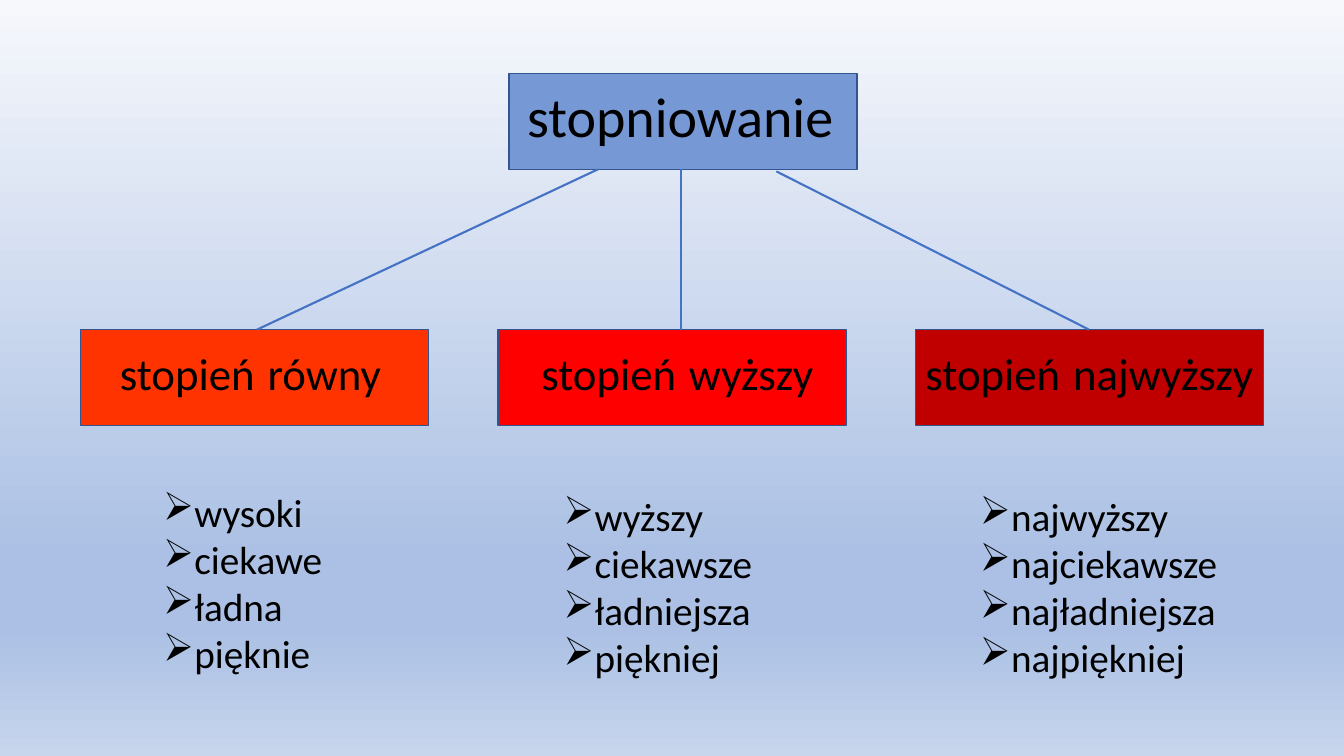
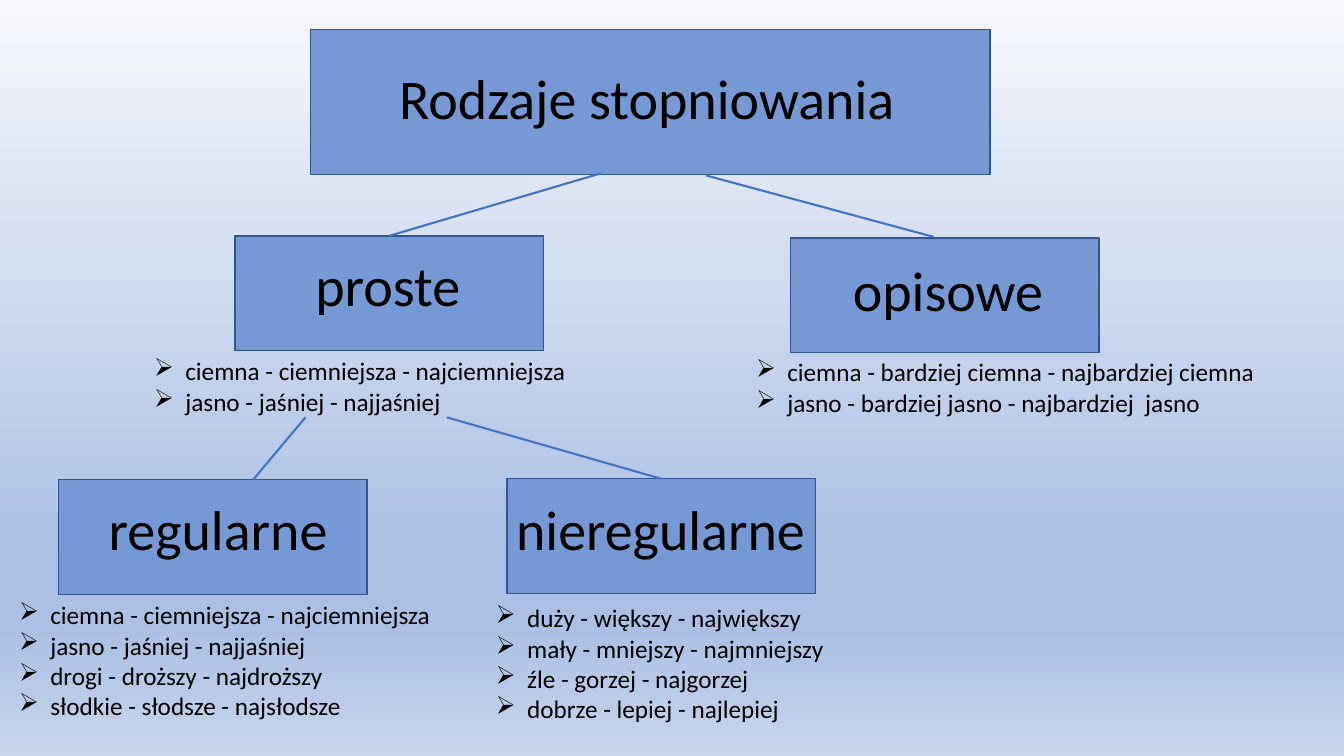
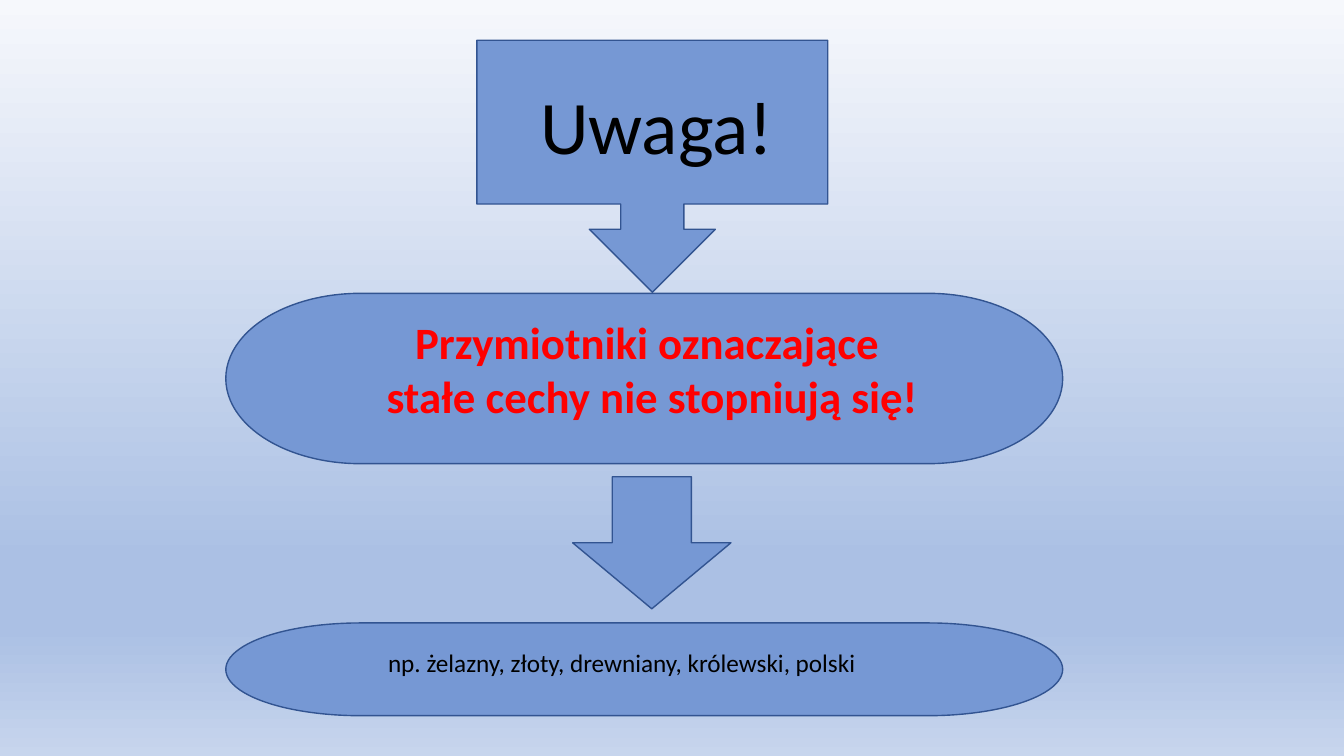
"""Build three slides on the comparison of Polish adjectives and adverbs."""
from pptx import Presentation
from pptx import util as u
from pptx.dml.color import RGBColor
from pptx.enum import shapes, text
from pptx.oxml import ns, xmlchemy

PX = 9144
FONT = "Calibri"
BULLET_INDENT = 31
COLORS = {
    "blue": "7698D4", "outline": "325491", "connector": "4472C4",
    "orange": "FF3300", "red": "FF0000", "dark red": "C00000", "black": "000000",
}
BACKGROUND_STOPS = [(0, "F6F8FC"), (74, "ABC0E4"), (83, "ABC0E4"), (100, "C7D5ED")]
PROCESS = shapes.MSO_SHAPE.FLOWCHART_PROCESS
TERMINATOR = shapes.MSO_SHAPE.FLOWCHART_TERMINATOR


def add_shape(slide, kind, box, color="blue"):
    shape = slide.shapes.add_shape(kind, *[length * PX for length in box])
    shape.shadow.inherit = False
    shape.fill.solid()
    shape.fill.fore_color.rgb = RGBColor.from_string(COLORS[color])
    shape.line.color.rgb = RGBColor.from_string(COLORS["outline"])
    shape.line.width = u.Pt(1)


def add_text(slide, box, size, lines, color="black", bold=False, centered=False, bulleted=False):
    frame = slide.shapes.add_textbox(*[length * PX for length in box]).text_frame
    frame.word_wrap = True
    frame.auto_size = text.MSO_AUTO_SIZE.SHAPE_TO_FIT_TEXT
    frame.text = "\n".join(lines)
    for paragraph in frame.paragraphs:
        if centered:
            paragraph.alignment = text.PP_ALIGN.CENTER
        if bulleted:
            properties = paragraph._p.get_or_add_pPr()
            properties.set("marL", str(BULLET_INDENT * PX))
            properties.set("indent", str(-BULLET_INDENT * PX))
            bullet = xmlchemy.OxmlElement("a:buChar")
            bullet.set("char", "➢")
            properties.append(bullet)
        for run in paragraph.runs:
            run.font.name = FONT
            run.font.size = u.Pt(size)
            run.font.bold = bold
            run.font.color.rgb = RGBColor.from_string(COLORS[color])
    return frame


presentation = Presentation()
presentation.slide_width = 1333 * PX
presentation.slide_height = 750 * PX

master = presentation.slide_master
background = master.background.fill
background.gradient()
background.gradient_angle = 270
stop_list = master._element.find(".//" + ns.qn("a:gsLst"))
for stop in list(stop_list):
    stop_list.remove(stop)
for percent, color in BACKGROUND_STOPS:
    stop = xmlchemy.OxmlElement("a:gs")
    stop.set("pos", str(percent * 1000))
    stop_color = xmlchemy.OxmlElement("a:srgbClr")
    stop_color.set("val", color)
    stop.append(stop_color)
    stop_list.append(stop)

blank = presentation.slide_layouts[6]
degrees_slide, kinds_slide, warning_slide = [presentation.slides.add_slide(blank) for _ in range(3)]

add_shape(degrees_slide, PROCESS, (505, 73, 345, 95))
add_text(degrees_slide, (513, 76, 338, 77), 40, ["stopniowanie"])
degrees = [
    ("równy", "orange", (109, 327, 338, 77), (152, 479, 236, 199),
     ["wysoki", "ciekawe", "ładna", "pięknie"]),
    ("wyższy", "red", (527, 327, 338, 77), (549, 483, 236, 199),
     ["wyższy", "ciekawsze", "ładniejsza", "piękniej"]),
    ("najwyższy", "dark red", (908, 327, 345, 77), (962, 483, 276, 199),
     ["najwyższy", "najciekawsze", "najładniejsza", "najpiękniej"]),
]
for column, (degree, color, label_box, list_box, examples) in enumerate(degrees):
    add_shape(degrees_slide, PROCESS, (80 + 414 * column, 327, 345, 95), color)
    label = add_text(degrees_slide, label_box, 32, ["stopień"]).paragraphs[0]
    for word, size in [(" ", 40), (degree, 32)]:
        run = label.add_run()
        run.text = word
        run.font.name = FONT
        run.font.size = u.Pt(size)
        run.font.color.rgb = RGBColor.from_string(COLORS["black"])
    add_text(degrees_slide, list_box, 28, examples, bulleted=True)

kinds = [
    ("Rodzaje stopniowania", (308, 29, 674, 144), (386, 58, 561, 77)),
    ("proste", (233, 234, 306, 114), (303, 244, 234, 77)),
    ("opisowe", (784, 236, 306, 114), (836, 249, 222, 77)),
    ("regularne", (58, 476, 306, 114), (98, 486, 259, 77)),
    ("nieregularne", (503, 475, 306, 114), (502, 486, 311, 77)),
]
for kind, box, label_box in kinds:
    add_shape(kinds_slide, PROCESS, box)
    add_text(kinds_slide, label_box, 40, [kind])

regular = ["ciemna - ciemniejsza - najciemniejsza", "jasno - jaśniej - najjaśniej"]
kind_examples = [
    ((143, 348, 472, 71), regular),
    ((740, 349, 539, 71), ["ciemna - bardziej ciemna - najbardziej ciemna",
                           "jasno - bardziej jasno - najbardziej  jasno"]),
    ((9, 590, 472, 131), regular + ["drogi - droższy - najdroższy",
                                    "słodkie - słodsze - najsłodsze"]),
    ((482, 593, 472, 131), ["duży - większy - największy", "mały - mniejszy - najmniejszy",
                            "źle - gorzej - najgorzej", "dobrze - lepiej - najlepiej"]),
]
for box, examples in kind_examples:
    add_text(kinds_slide, box, 18, examples, bulleted=True)

add_shape(warning_slide, shapes.MSO_SHAPE.DOWN_ARROW_CALLOUT, (473, 40, 348, 250))
add_shape(warning_slide, TERMINATOR, (224, 291, 830, 169))
add_shape(warning_slide, shapes.MSO_SHAPE.DOWN_ARROW, (568, 473, 157, 131))
add_shape(warning_slide, TERMINATOR, (224, 618, 830, 92))
add_text(warning_slide, (526, 73, 274, 101), 54, ["Uwaga!"])
add_text(warning_slide, (342, 307, 610, 118), 32,
         ["Przymiotniki oznaczające ", "stałe cechy nie stopniują się!"],
         color="red", bold=True, centered=True)
add_text(warning_slide, (375, 637, 652, 40), 18,
         ["np. żelazny, złoty, drewniany, królewski, polski"])

branches = [
    (degrees_slide, (593, 168, 255, 327)),
    (degrees_slide, (675, 168, 675, 327)),
    (degrees_slide, (770, 170, 1080, 327)),
    (kinds_slide, (596, 172, 386, 234)),
    (kinds_slide, (700, 174, 926, 235)),
    (kinds_slide, (303, 414, 251, 476)),
    (kinds_slide, (443, 414, 656, 475)),
]
for slide, ends in branches:
    branch = slide.shapes.add_connector(
        shapes.MSO_CONNECTOR.STRAIGHT, *[length * PX for length in ends])
    branch.line.color.rgb = RGBColor.from_string(COLORS["connector"])
    branch.line.width = u.Pt(1.5)
    branch._element.spPr.append(xmlchemy.OxmlElement("a:effectLst"))

presentation.save("out.pptx")
